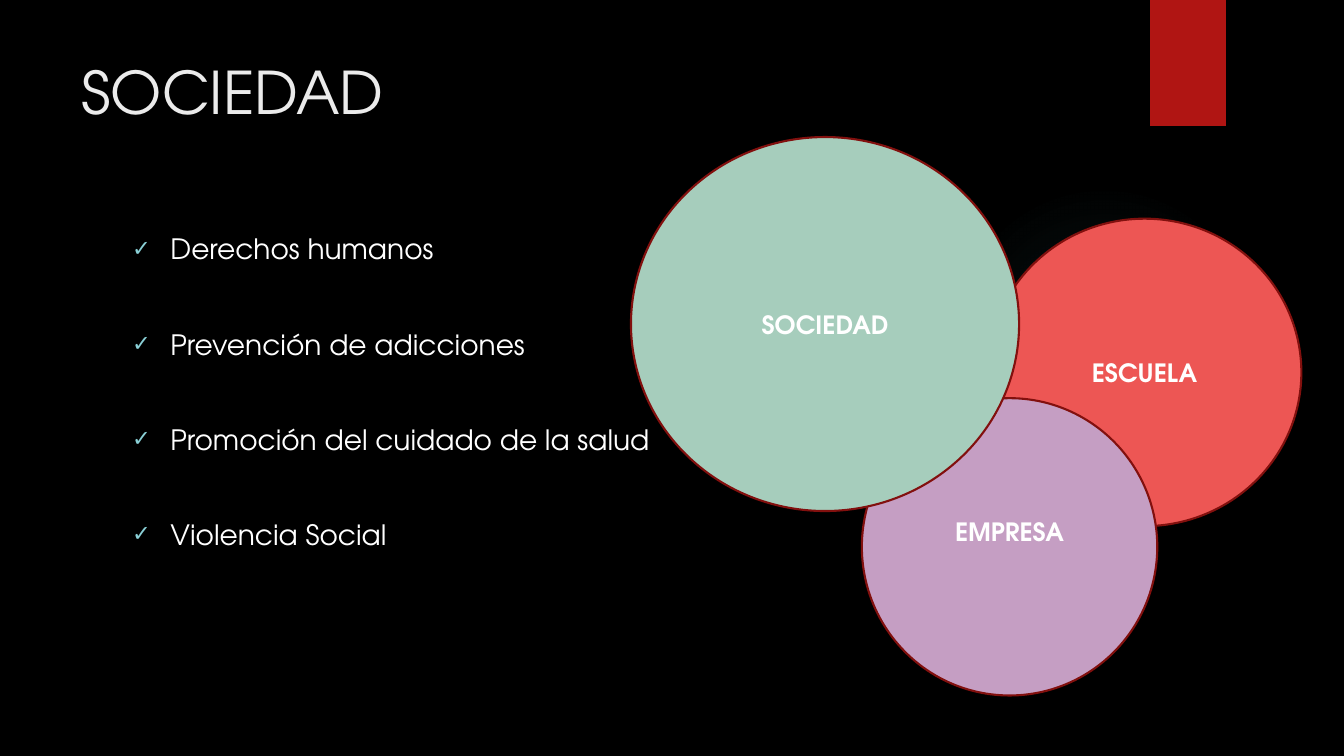
from lxml.etree import SubElement
from pptx import Presentation
from pptx.dml.color import RGBColor
from pptx.enum.shapes import MSO_SHAPE
from pptx.enum.text import MSO_ANCHOR, MSO_AUTO_SIZE, PP_ALIGN
from pptx.oxml import parse_xml
from pptx.oxml.ns import nsdecls, qn
from pptx.util import Inches, Pt

SLIDE_W, SLIDE_H = Inches(13.333), Inches(7.5)
FONT = "TeX Gyre Adventor"
WHITE = "FFFFFF"
TOPICS = [
    "Derechos humanos",
    "Prevención de adicciones",
    "Promoción del cuidado de la salud",
    "Violencia Social",
]
# Label, box in percent of the slide, fill, extra bottom inset; back to front
CIRCLES = [
    ("ESCUELA", (73.5, 28.93, 23.33, 40.67), "ED5654", 0),
    ("EMPRESA", (64.13, 52.67, 21.98, 39.33), "C59EC3", 0.3),
    ("SOCIEDAD", (46.95, 18.13, 28.88, 49.47), "A6CDBC", 0),
]


def color(hex_string):
    return RGBColor.from_string(hex_string)


def share(left, top, width, height):
    """Turn percentages of the slide into a box in EMU."""
    return [int(size * percent / 100) for size, percent in
            zip((SLIDE_W, SLIDE_H, SLIDE_W, SLIDE_H), (left, top, width, height))]


def move(placeholder, box):
    placeholder.left, placeholder.top, placeholder.width, placeholder.height = share(*box)


def write(frame, lines, *, size, fill=WHITE, bold=False, align=PP_ALIGN.LEFT,
          anchor=MSO_ANCHOR.TOP, gap=0, bullet=None):
    frame.word_wrap = True
    frame.auto_size = MSO_AUTO_SIZE.NONE
    frame.vertical_anchor = anchor
    for index, line in enumerate(lines):
        paragraph = frame.add_paragraph() if index else frame.paragraphs[0]
        if bullet:
            add_bullet(paragraph, bullet)
        paragraph.alignment = align
        paragraph.space_before = Pt(gap if index else 0)
        run = paragraph.add_run()
        run.text = line
        run.font.name, run.font.size, run.font.bold = FONT, Pt(size), bold
        run.font.color.rgb = color(fill)


def add_bullet(paragraph, mark):
    indent = Inches(0.38)
    properties = paragraph._p.get_or_add_pPr()
    properties.set("marL", str(indent))
    properties.set("indent", str(-indent))
    bullet_color = SubElement(properties, qn("a:buClr"))
    SubElement(bullet_color, qn("a:srgbClr"), val="8AD0D6")
    SubElement(properties, qn("a:buSzPct"), val="80000")
    SubElement(properties, qn("a:buFont"), typeface="Arial")
    SubElement(properties, qn("a:buChar"), char=mark)


def add_figure(slide, kind, box, fill=None, line=None):
    figure = slide.shapes.add_shape(kind, *share(*box))
    figure.shadow.inherit = False
    if fill:
        figure.fill.solid()
        figure.fill.fore_color.rgb = color(fill)
    else:
        figure.fill.background()
    if line:
        figure.line.color.rgb = color(line)
        figure.line.width = Pt(1.5)
    else:
        figure.line.fill.background()
    return figure


def add_glow(slide, box):
    """Add a faint circle that fades out from its centre."""
    glow = add_figure(slide, MSO_SHAPE.OVAL, box)
    stops = "".join(
        f'<a:gs pos="{position}000"><a:srgbClr val="50B9C1">'
        f'<a:alpha val="{opacity}000"/></a:srgbClr></a:gs>'
        for position, opacity in ((0, 7), (36, 6), (69, 0)))
    gradient = parse_xml(
        f'<a:gradFill {nsdecls("a")}><a:gsLst>{stops}</a:gsLst><a:path path="circle">'
        '<a:fillToRect l="50000" t="50000" r="50000" b="50000"/></a:path></a:gradFill>')
    properties = glow._element.spPr
    properties.replace(properties.find(qn("a:noFill")), gradient)


def add_circle(slide, label, box, fill, extra_inset):
    circle = add_figure(slide, MSO_SHAPE.OVAL, box, fill, line="82100E")
    circle.text_frame.margin_bottom = Inches(0.05 + extra_inset)
    write(circle.text_frame, [label], size=18, bold=True,
          align=PP_ALIGN.CENTER, anchor=MSO_ANCHOR.MIDDLE)


def main():
    deck = Presentation()
    deck.slide_width, deck.slide_height = SLIDE_W, SLIDE_H
    slide = deck.slides.add_slide(deck.slide_layouts[1])
    slide.background.fill.solid()
    slide.background.fill.fore_color.rgb = color("000000")

    add_glow(slide, (70.58, 24.4, 23.1, 41.07))
    add_figure(slide, MSO_SHAPE.RECTANGLE, (85.58, 0, 5.63, 16.67), "B01513")

    heading, topics = slide.placeholders
    move(heading, (5.33, 6.67, 77.18, 20.4))
    write(heading.text_frame, ["SOCIEDAD"], size=42, fill="EBEBEB")
    move(topics, (9.08, 30, 73.35, 61.2))
    write(topics.text_frame, TOPICS, size=20, gap=44, bullet="✓")

    for circle in CIRCLES:
        add_circle(slide, *circle)
    deck.save("out.pptx")


if __name__ == "__main__":
    main()
